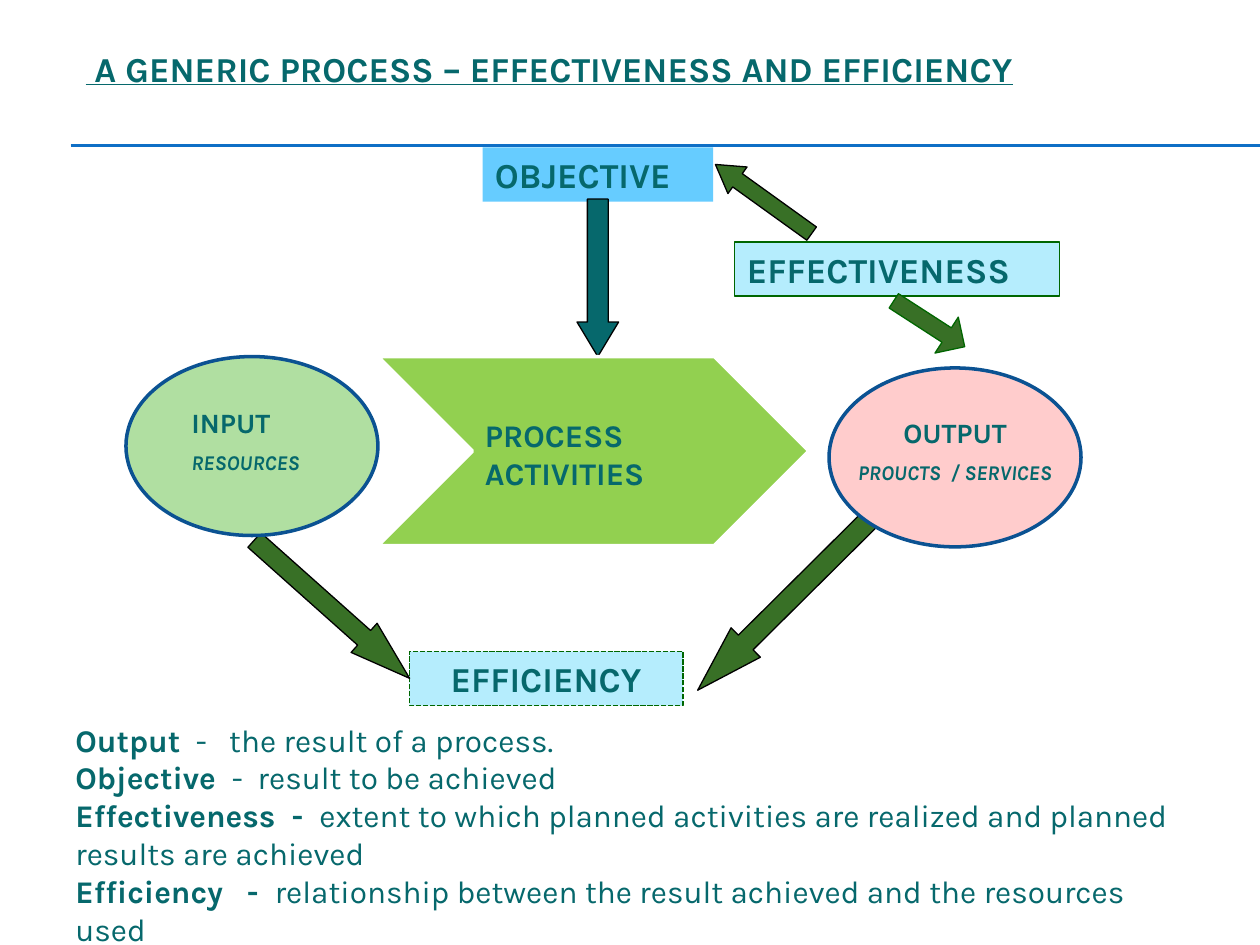
from typing import NamedTuple, Optional

from lxml.etree import SubElement
from pptx import Presentation
from pptx.dml.color import RGBColor
from pptx.enum.dml import MSO_LINE
from pptx.enum.shapes import MSO_CONNECTOR, MSO_SHAPE
from pptx.enum.text import MSO_ANCHOR, MSO_AUTO_SIZE, PP_ALIGN
from pptx.oxml.ns import qn
from pptx.util import Emu, Pt

PX = 9144  # one px is a hundredth of an inch
FONT = "Karla"
COLORS = {
    "teal": "06686C",
    "rule": "0F6FC6",
    "sky": "66CCFF",
    "ice": "B5EDFD",
    "forest": "387026",
    "dark_green": "006600",
    "lime": "92D050",
    "mint": "B0DFA1",
    "pink": "FFCCCC",
    "navy": "0B5292",
    "black": "000000",
    "white": "FFFFFF",
}


class Box(NamedTuple):
    left: int
    top: int
    width: int
    height: int


class Figure(NamedTuple):
    kind: MSO_SHAPE
    box: Box
    fill: str
    line: Optional[str] = None
    weight: float = 0.75
    rotation: float = 0
    adjustments: tuple = ()
    dash: Optional[MSO_LINE] = None


class Span(NamedTuple):
    text: str
    size: int
    bold: bool = True
    italic: bool = False
    underline: bool = False


class Label(NamedTuple):
    box: Box
    paras: list
    align: PP_ALIGN = PP_ALIGN.LEFT
    gap: int = 0


def color(name: str) -> RGBColor:
    return RGBColor.from_string(COLORS[name])


def emu(box: Box) -> list:
    return [Emu(length * PX) for length in box]


def write(frame, paras: list, *, align=PP_ALIGN.LEFT, gap=0, anchor=MSO_ANCHOR.TOP) -> None:
    """Fill a text frame with paragraphs, each a list of spans."""
    frame.word_wrap = True
    frame.auto_size = MSO_AUTO_SIZE.NONE
    frame.vertical_anchor = anchor
    for index, spans in enumerate(paras):
        para = frame.add_paragraph() if index else frame.paragraphs[0]
        para.alignment = align
        para.space_before = Pt(gap if index else 0)
        for span in spans:
            run = para.add_run()
            run.text = span.text
            run.font.name = FONT
            run.font.size = Pt(span.size)
            run.font.bold = span.bold
            run.font.italic = span.italic
            run.font.underline = span.underline
            run.font.color.rgb = color("teal")


def draw_figure(page, figure: Figure):
    shape = page.shapes.add_shape(figure.kind, *emu(figure.box))
    shape.shadow.inherit = False
    shape.rotation = figure.rotation
    for index, value in enumerate(figure.adjustments):
        shape.adjustments[index] = value
    shape.fill.solid()
    shape.fill.fore_color.rgb = color(figure.fill)
    if figure.line:
        shape.line.color.rgb = color(figure.line)
        shape.line.width = Pt(figure.weight)
        if figure.dash:
            shape.line.dash_style = figure.dash
    else:
        shape.line.fill.background()
    return shape


def draw_label(page, label: Label) -> None:
    text_box = page.shapes.add_textbox(*emu(label.box))
    write(text_box.text_frame, label.paras, align=label.align, gap=label.gap)


def draw_rule(page, top: int) -> None:
    left, y, right = (Emu(length * PX) for length in (56, top, 1000))
    rule = page.shapes.add_connector(MSO_CONNECTOR.STRAIGHT, left, y, right, y)
    rule.line.color.rgb = color("rule")
    rule.line.width = Pt(0.75)
    SubElement(rule._element.spPr, qn("a:effectLst"))


BANNERS = [
    ("OBJECTIVE", PP_ALIGN.LEFT,
     Figure(MSO_SHAPE.RECTANGLE, Box(383, 117, 183, 43), "sky")),
    ("EFFECTIVENESS", PP_ALIGN.LEFT,
     Figure(MSO_SHAPE.RECTANGLE, Box(583, 192, 258, 43), "ice", "dark_green", 1)),
    ("EFFICIENCY", PP_ALIGN.CENTER,
     Figure(MSO_SHAPE.RECTANGLE, Box(325, 517, 217, 43), "ice", "dark_green", 1,
            dash=MSO_LINE.SQUARE_DOT)),
]

FIGURES = [
    # Arrows
    Figure(MSO_SHAPE.DOWN_ARROW, Box(458, 158, 33, 125), "teal", "black",
           adjustments=(0.5, 0.83)),
    Figure(MSO_SHAPE.LEFT_ARROW, Box(559, 145, 94, 26), "forest", "black",
           rotation=35.7, adjustments=(0.5, 0.83)),
    Figure(MSO_SHAPE.RIGHT_ARROW, Box(704, 240, 67, 34), "forest", "dark_green",
           rotation=32.9, adjustments=(0.4, 0.5)),
    Figure(MSO_SHAPE.RIGHT_ARROW, Box(181, 468, 165, 31), "forest", "black",
           rotation=41.7, adjustments=(0.5, 1.56)),
    Figure(MSO_SHAPE.LEFT_ARROW, Box(526, 464, 191, 33), "forest", "black",
           rotation=315.2, adjustments=(0.5, 1.63)),
    # Process flow
    Figure(MSO_SHAPE.CHEVRON, Box(300, 283, 342, 150), "lime", "white", 2),
    Figure(MSO_SHAPE.OVAL, Box(100, 283, 200, 142), "mint", "navy", 2),
    Figure(MSO_SHAPE.OVAL, Box(658, 292, 200, 142), "pink", "navy", 2),
]

DEFINITIONS = [
    ("Output ", " -   the result of a process."),
    ("Objective  ", "-  result to be achieved"),
    ("Effectiveness  -  ",
     "extent to which planned activities are realized and planned results are achieved"),
    ("Efficiency   -  ",
     "relationship between the result achieved and the resources used"),
]

LABELS = [
    Label(Box(142, 317, 125, 67),
          [[Span("INPUT", 16)], [Span("RESOURCES", 12, italic=True)]], gap=6),
    Label(Box(375, 325, 175, 71), [[Span("PROCESS ACTIVITIES", 18)]]),
    Label(Box(658, 325, 200, 67),
          [[Span("OUTPUT", 16)], [Span("PROUCTS  / SERVICES", 12, italic=True)]],
          PP_ALIGN.CENTER, gap=6),
    Label(Box(50, 567, 892, 162),
          [[Span(term, 18), Span(meaning, 18, bold=False)] for term, meaning in DEFINITIONS]),
]


def main() -> None:
    deck = Presentation()
    deck.slide_width, deck.slide_height = Emu(1000 * PX), Emu(750 * PX)
    page = deck.slides.add_slide(deck.slide_layouts[5])

    # Title and the double rule below it
    title = page.shapes.title
    title.left, title.top, title.width, title.height = emu(Box(58, 25, 900, 58))
    heading = Span(" A GENERIC PROCESS – EFFECTIVENESS AND EFFICIENCY", 20, underline=True)
    write(title.text_frame, [[heading]], anchor=MSO_ANCHOR.MIDDLE)
    for top in (115, 116):
        draw_rule(page, top)

    # Diagram
    for text, align, figure in BANNERS:
        banner = draw_figure(page, figure)
        write(banner.text_frame, [[Span(text, 20)]], align=align)
    for figure in FIGURES:
        draw_figure(page, figure)

    # Flow labels and definitions
    for label in LABELS:
        draw_label(page, label)

    deck.save("out.pptx")


if __name__ == "__main__":
    main()
